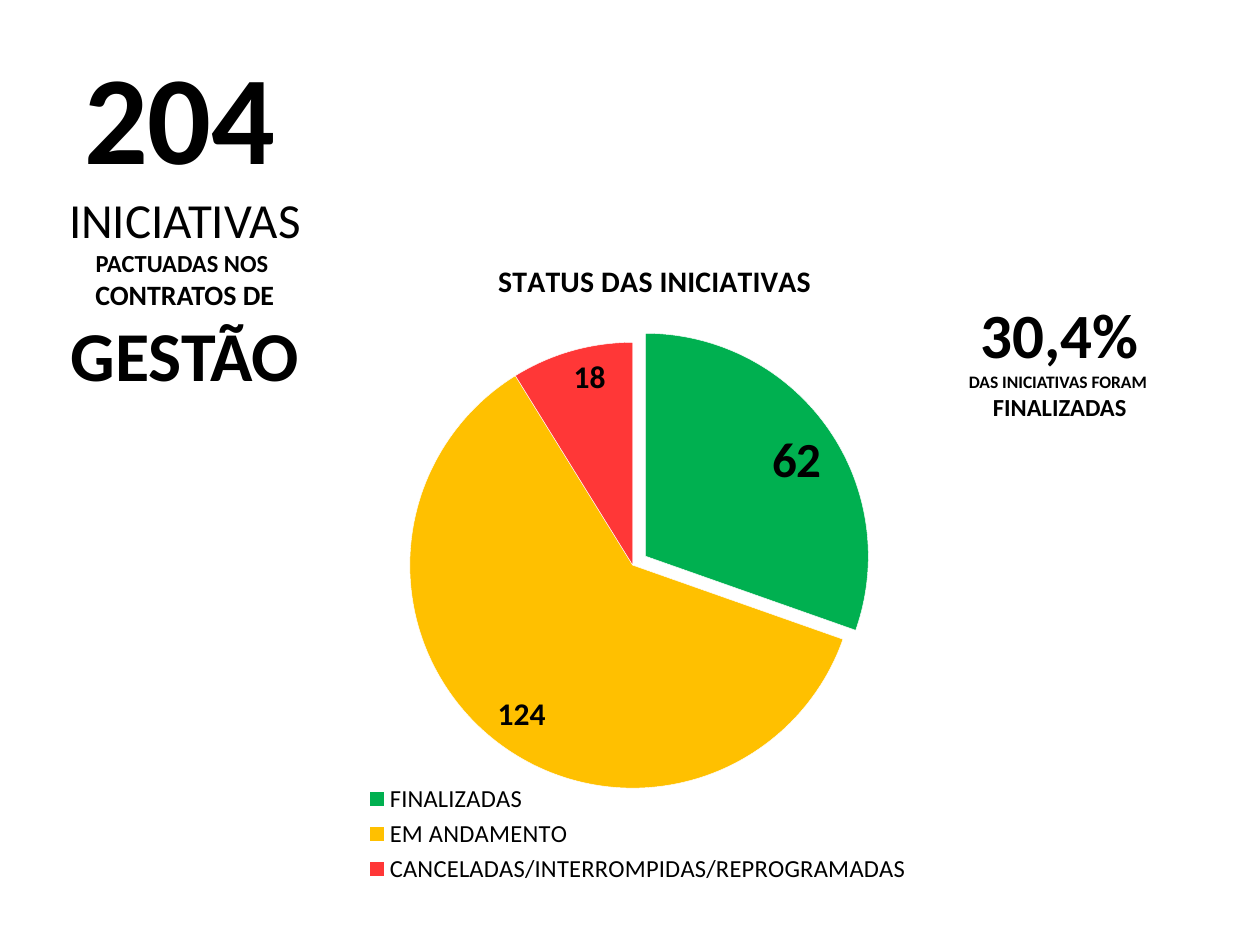
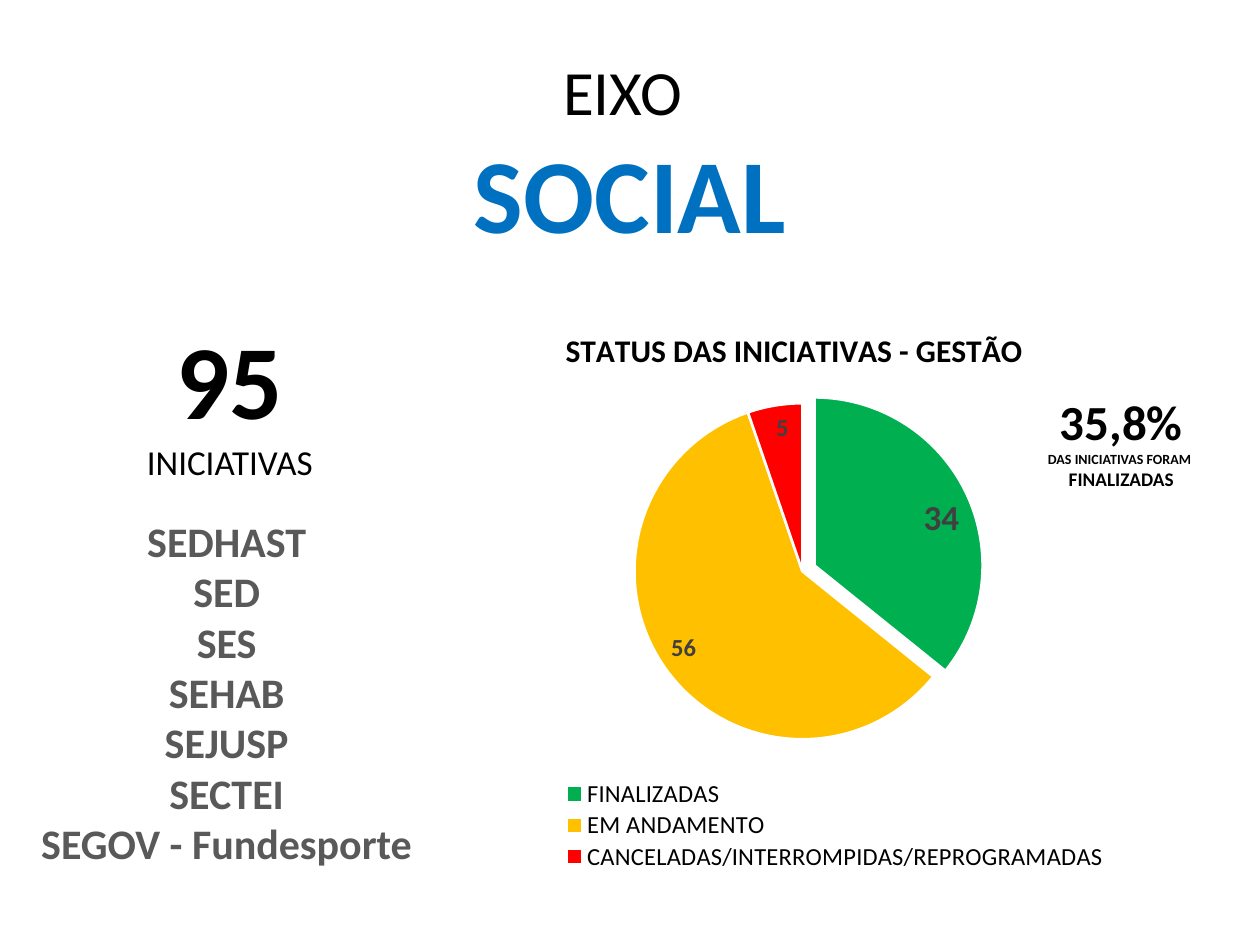
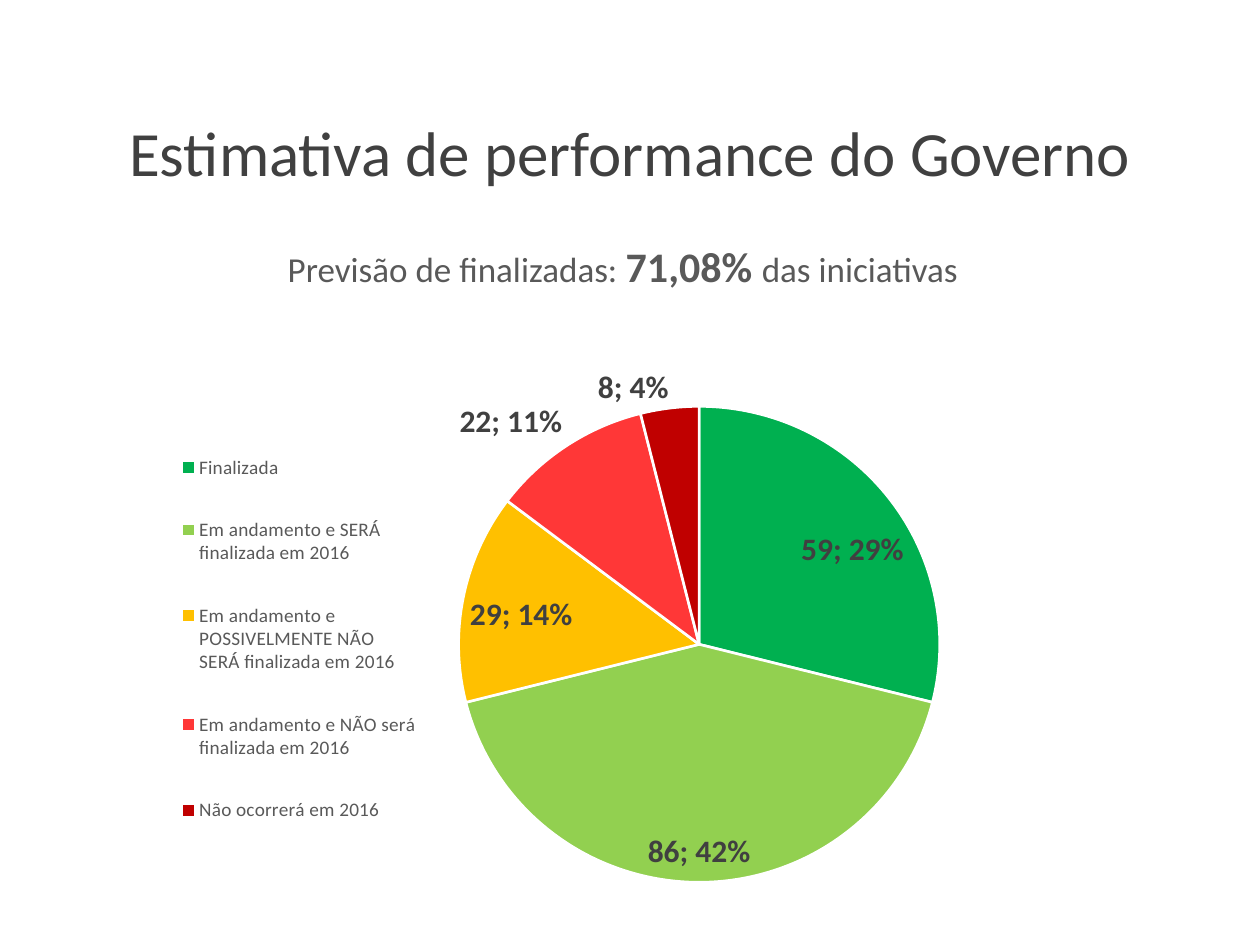
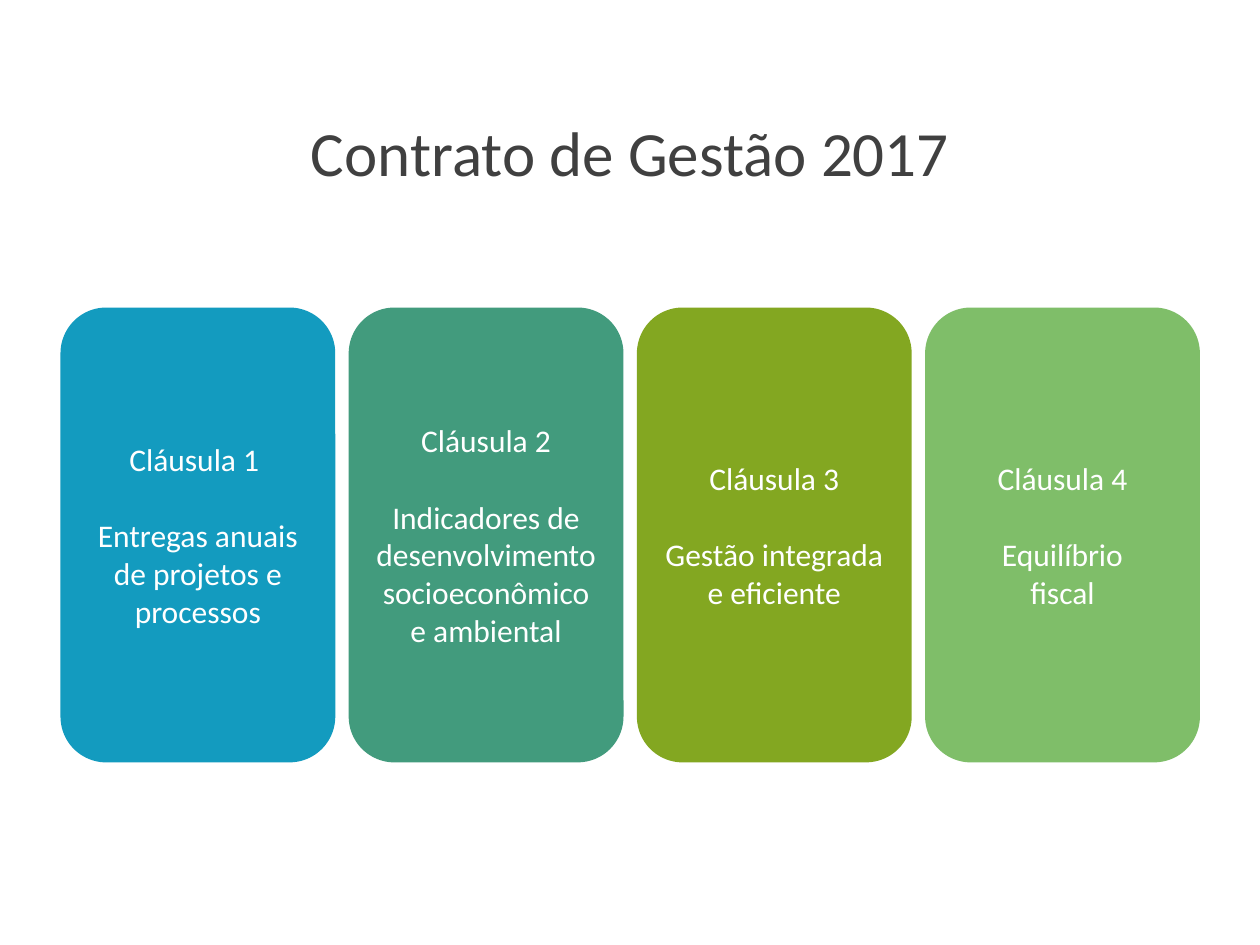
"""Build the four slides on the status of the management contracts."""
from dataclasses import dataclass
from typing import NamedTuple, Optional

import pptx
import pptx.chart.data
import pptx.dml.color
import pptx.enum.chart
import pptx.enum.shapes
import pptx.enum.text
import pptx.oxml
import pptx.oxml.ns
import pptx.util
from pptx.util import Cm, Pt


@dataclass(frozen=True)
class Theme:
    """Colours and type sizes shared by the slides."""

    font: str = "Calibri"
    black: str = "000000"
    dark: str = "404040"
    grey: str = "595959"
    white: str = "FFFFFF"
    blue: str = "0070C0"
    done: str = "00B050"
    expected: str = "92D050"
    ongoing: str = "FFC000"
    delayed: str = "FF3737"
    cancelled: str = "FF0000"
    dropped: str = "C00000"
    clauses: tuple[str, ...] = ("139BBF", "429B7D", "83A721", "7FBE69")
    giant: int = 72
    huge: int = 60
    big: int = 40
    title: int = 36
    large: int = 28
    medium: int = 24
    lead: int = 20
    label: int = 18
    heading: int = 17
    text: int = 16
    small: int = 14
    caption: int = 11
    note: int = 10
    tiny: int = 8


THEME = Theme()
TITLE_AND_BODY, TITLE_ONLY = 1, 5
STATUSES = ("FINALIZADAS", "EM ANDAMENTO", "CANCELADAS/INTERROMPIDAS/REPROGRAMADAS")


class Box(NamedTuple):
    """Left, top, width and height in centimetres."""

    left: float
    top: float
    width: float
    height: float

    def lengths(self) -> tuple:
        """Return the four sides as lengths."""
        return tuple(Cm(side) for side in self)


class Run(NamedTuple):
    """A stretch of text in one format."""

    text: str
    size: int
    bold: bool = False
    color: str = THEME.black


class Layout(NamedTuple):
    """A place within a chart, in fractions of its size."""

    x: float
    y: float
    w: Optional[float] = None
    h: Optional[float] = None


@dataclass(frozen=True)
class Pie:
    """A pie chart with its values and format."""

    box: Box
    series: str
    slices: tuple[tuple[str, int, str], ...]
    plot: Layout
    legend_size: int
    legend_color: str
    label_size: int
    label_color: str
    border: float
    legend: Optional[Layout] = None
    title: Optional[Run] = None
    title_place: Optional[Layout] = None
    explosion: int = 0
    first_label_size: Optional[int] = None
    percent: bool = False


def rgb(color: str) -> pptx.dml.color.RGBColor:
    """Return a colour from its hexadecimal form."""
    return pptx.dml.color.RGBColor.from_string(color)


def format_font(font, size: float, color: str, bold: bool = False) -> None:
    """Set face, size, colour and weight of a font."""
    font.name, font.size, font.bold = THEME.font, Pt(size), bold
    font.color.rgb = rgb(color)


def write_text(frame, *lines: tuple[Run, ...], align: str = "CENTER", anchor: str = "TOP",
               gap: float = 0, margin_left: float = 0.25, margin_right: float = 0.25) -> None:
    """Write lines of runs, with a gap after the first line."""
    frame.word_wrap = True
    frame.auto_size = pptx.enum.text.MSO_AUTO_SIZE.NONE
    frame.vertical_anchor = pptx.enum.text.MSO_ANCHOR[anchor]
    frame.margin_left, frame.margin_right = Cm(margin_left), Cm(margin_right)
    for index, line in enumerate(lines):
        paragraph = frame.paragraphs[0] if index == 0 else frame.add_paragraph()
        properties = paragraph._p.get_or_add_pPr()
        properties.set("marL", "0")
        properties.set("indent", "0")
        properties.append(pptx.oxml.parse_xml(f"<a:buNone {pptx.oxml.ns.nsdecls('a')}/>"))
        paragraph.alignment = pptx.enum.text.PP_ALIGN[align]
        paragraph.space_before = Pt(gap if index == 1 else 0)
        for part in line:
            run = paragraph.add_run()
            run.text = part.text
            format_font(run.font, part.size, part.color, part.bold)


def place(shape, box: Box):
    """Move a shape to a box and return its text frame."""
    shape.left, shape.top, shape.width, shape.height = box.lengths()
    return shape.text_frame


def add_text(slide, box: Box, *lines: tuple[Run, ...]) -> None:
    """Add a text box."""
    write_text(slide.shapes.add_textbox(*box.lengths()).text_frame, *lines)


def add_plain_title(slide, text: str) -> None:
    """Fill the title in the style of the closing slides."""
    write_text(place(slide.shapes.title, Box(0, 2.16, 25.4, 1.8)),
               (Run(text, THEME.title, color=THEME.dark),))


def add_share(slide, box: Box, share: str, sizes: tuple[int, int, int]) -> None:
    """Add the share of finished initiatives."""
    texts = (share, "DAS INICIATIVAS FORAM ", "FINALIZADAS")
    add_text(slide, box, *((Run(text, size, True),) for text, size in zip(texts, sizes)))


def set_layout(chart, part: str, place_in_chart: Layout, after: Optional[str] = None) -> None:
    """Give a chart part a manual place."""
    qn = pptx.oxml.ns.qn
    element = chart.element.find(f".//{qn('c:' + part)}")
    for old in element.findall(qn("c:layout")):
        element.remove(old)
    target = '<c:layoutTarget val="inner"/>' if part == "plotArea" else ""
    modes = '<c:xMode val="edge"/><c:yMode val="edge"/>'
    sides = "".join(f'<c:{name} val="{value}"/>'
                    for name, value in place_in_chart._asdict().items() if value is not None)
    layout = pptx.oxml.parse_xml(
        f"<c:layout {pptx.oxml.ns.nsdecls('c')}><c:manualLayout>{target}{modes}{sides}"
        "</c:manualLayout></c:layout>")
    if after:
        element.find(qn(f"c:{after}")).addnext(layout)
    else:
        element.insert(0, layout)


def add_labels(series, pie: Pie) -> None:
    """Label the slices of a pie."""
    positions = pptx.enum.chart.XL_LABEL_POSITION
    position = positions.BEST_FIT if pie.percent else positions.INSIDE_END
    labels = series.data_labels
    labels.show_value, labels.show_percentage = True, pie.percent
    labels.position = position
    format_font(labels.font, pie.label_size, pie.label_color, True)
    if pie.first_label_size:
        first = series.points[0].data_label
        format_font(first.font, pie.first_label_size, pie.label_color, True)
        first.position = position


def add_pie(slide, pie: Pie) -> None:
    """Add a pie chart."""
    data = pptx.chart.data.CategoryChartData()
    data.categories = [name for name, _, _ in pie.slices]
    data.add_series(pie.series, [value for _, value, _ in pie.slices])
    chart = slide.shapes.add_chart(
        pptx.enum.chart.XL_CHART_TYPE.PIE, *pie.box.lengths(), data).chart
    format_font(chart.font, pie.legend_size, THEME.black)
    chart.has_title = pie.title is not None
    if pie.title:
        write_text(chart.chart_title.text_frame, (pie.title,))
        set_layout(chart, "title", pie.title_place, after="tx")
    chart.has_legend = True
    chart.legend.position = pptx.enum.chart.XL_LEGEND_POSITION.BOTTOM
    chart.legend.include_in_layout = False
    format_font(chart.legend.font, pie.legend_size, pie.legend_color)
    if pie.legend:
        set_layout(chart, "legend", pie.legend, after="legendPos")
    set_layout(chart, "plotArea", pie.plot)
    chart.plots[0].vary_by_categories = True
    series = chart.plots[0].series[0]
    for index, (_, _, color) in enumerate(pie.slices):
        look = series.points[index].format
        look.fill.solid()
        look.fill.fore_color.rgb = rgb(color)
        look.line.color.rgb = rgb(THEME.white)
        look.line.width = Pt(pie.border)
    if pie.explosion:
        first = series._element.find(pptx.oxml.ns.qn("c:dPt"))
        first.find(pptx.oxml.ns.qn("c:spPr")).addprevious(pptx.oxml.parse_xml(
            f'<c:explosion {pptx.oxml.ns.nsdecls("c")} val="{pie.explosion}"/>'))
    add_labels(series, pie)


def status_slices(values: tuple[int, ...], last_color: str) -> tuple:
    """Pair the three statuses with values and colours."""
    return tuple(zip(STATUSES, values, (THEME.done, THEME.ongoing, last_color)))


def build_overview(slide) -> None:
    """Show all initiatives by status."""
    add_pie(slide, Pie(
        Box(2.41, 4.32, 20.9, 13.61), "STATUS DAS INICIATIVAS",
        status_slices((62, 124, 18), THEME.delayed), Layout(0.28, 0.13, 0.43, 0.78),
        THEME.small, THEME.black, THEME.label, THEME.black, 0.25,
        title=Run("STATUS DAS INICIATIVAS", THEME.heading, True),
        title_place=Layout(0.36, 0.06), explosion=7, first_label_size=THEME.large))
    write_text(place(slide.shapes.title, Box(0.46, 0.64, 6.53, 7.52)),
               (Run("204", THEME.giant, True), Run(" ", THEME.medium)),
               (Run("INICIATIVAS", THEME.large),),
               (Run("PACTUADAS NOS ", THEME.small, True),),
               (Run("CONTRATOS DE", THEME.text, True),),
               (Run("GESTÃO", THEME.big, True),))
    add_share(slide, Box(19.13, 5.84, 4.47, 2.82), "30,4%",
              (THEME.title, THEME.note, THEME.small))


def build_social(slide) -> None:
    """Show the initiatives of the social axis."""
    write_text(place(slide.shapes.title, Box(0, 0.94, 25.4, 4.37)),
               (Run("EIXO ", THEME.title),),
               (Run("SOCIAL", THEME.huge, True, THEME.blue),))
    add_text(slide, Box(1.37, 6.22, 6.53, 3.68),
             (Run("95", THEME.huge, True),), (Run("INICIATIVAS", THEME.lead),))
    agencies = ("SEDHAST", "SED", "SES", "SEHAB", "SEJUSP", "SECTEI", "SEGOV - Fundesporte")
    write_text(place(slide.placeholders[1], Box(0, 10.26, 9.14, 7.44)),
               *((Run(agency, THEME.medium, True, THEME.grey),) for agency in agencies))
    add_pie(slide, Pie(
        Box(6.58, 5.92, 18.82, 11.91), "Series 1",
        status_slices((34, 56, 5), THEME.cancelled), Layout(0.33, 0.17, 0.36, 0.6),
        THEME.small, THEME.black, THEME.small, THEME.dark, 1.5,
        legend=Layout(0.23, 0.82, 0.63, 0.16),
        title=Run("STATUS DAS INICIATIVAS - GESTÃO", THEME.label, True),
        title_place=Layout(0.25, 0.05), explosion=8, first_label_size=THEME.lead))
    add_share(slide, Box(20.37, 7.77, 4.47, 2.36), "35,8%",
              (THEME.large, THEME.tiny, THEME.caption))


def build_estimate(slide) -> None:
    """Show the expected performance of the government."""
    add_plain_title(slide, "Estimativa de performance do Governo")
    write_text(place(slide.placeholders[1], Box(0.43, 4.72, 20.12, 2.57)),
               (Run("Previsão de finalizadas: ", THEME.lead, color=THEME.grey),
                Run("71,08% ", THEME.medium, True, THEME.grey),
                Run("das iniciativas", THEME.lead, color=THEME.grey)),
               align="LEFT", margin_left=5.37)
    add_pie(slide, Pie(
        Box(3.15, 7.32, 16.46, 10.9), "Series 1",
        (("Finalizada", 59, THEME.done),
         ("Em andamento e SERÁ finalizada em 2016", 86, THEME.expected),
         ("Em andamento e POSSIVELMENTE NÃO SERÁ finalizada em 2016", 29, THEME.ongoing),
         ("Em andamento e NÃO será finalizada em 2016", 22, THEME.delayed),
         ("Não ocorrerá em 2016", 8, THEME.dropped)),
        Layout(0.37, 0.07, 0.59, 0.89), THEME.caption, THEME.grey, THEME.label, THEME.dark, 1.5,
        legend=Layout(0.03, 0.09, 0.29, 0.83), percent=True))


def build_contract(slide) -> None:
    """Show the four clauses of the next contract."""
    add_plain_title(slide, "Contrato de Gestão 2017")
    clauses = (
        ("Cláusula 1 ", "Entregas anuais de projetos e processos"),
        ("Cláusula 2", "Indicadores de desenvolvimento socioeconômico e ambiental"),
        ("Cláusula 3", "Gestão integrada e eficiente"),
        ("Cláusula 4", "Equilíbrio", "fiscal"),
    )
    for index, (clause, color) in enumerate(zip(clauses, THEME.clauses)):
        card = slide.shapes.add_shape(
            pptx.enum.shapes.MSO_SHAPE.ROUNDED_RECTANGLE,
            *Box(1.22 + 5.81 * index, 6.2, 5.54, 9.17).lengths())
        card.shadow.inherit = False
        card.fill.solid()
        card.fill.fore_color.rgb = rgb(color)
        card.line.fill.background()
        write_text(card.text_frame,
                   *((Run(text, THEME.label, color=THEME.white),) for text in clause),
                   anchor="MIDDLE", gap=22, margin_left=0.24, margin_right=0.24)


def main() -> None:
    """Build and save the presentation."""
    deck = pptx.Presentation()
    deck.slide_width, deck.slide_height = Cm(25.4), Cm(19.05)
    for layout, build in ((TITLE_ONLY, build_overview), (TITLE_AND_BODY, build_social),
                          (TITLE_AND_BODY, build_estimate), (TITLE_ONLY, build_contract)):
        build(deck.slides.add_slide(deck.slide_layouts[layout]))
    deck.save("out.pptx")


if __name__ == "__main__":
    main()
